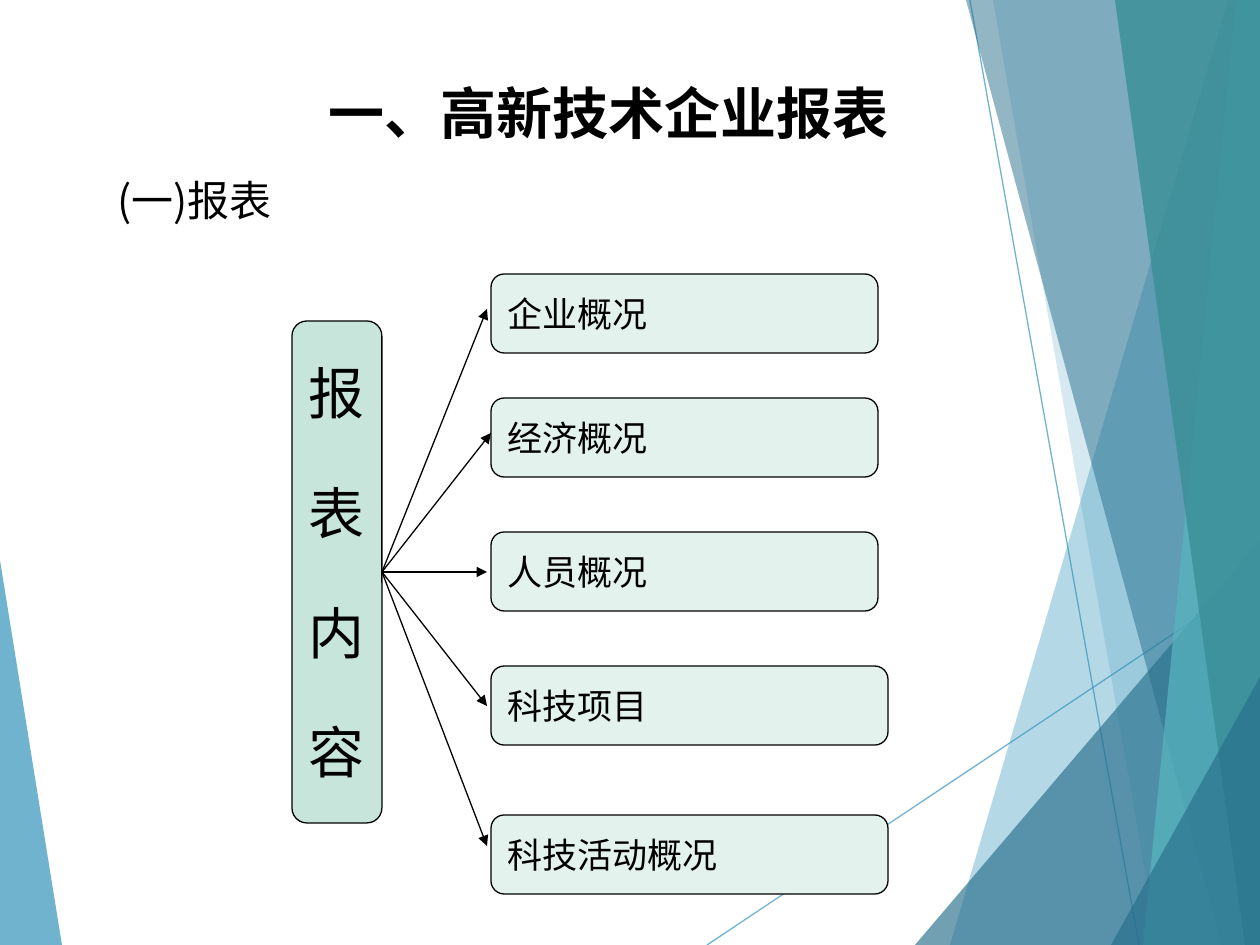
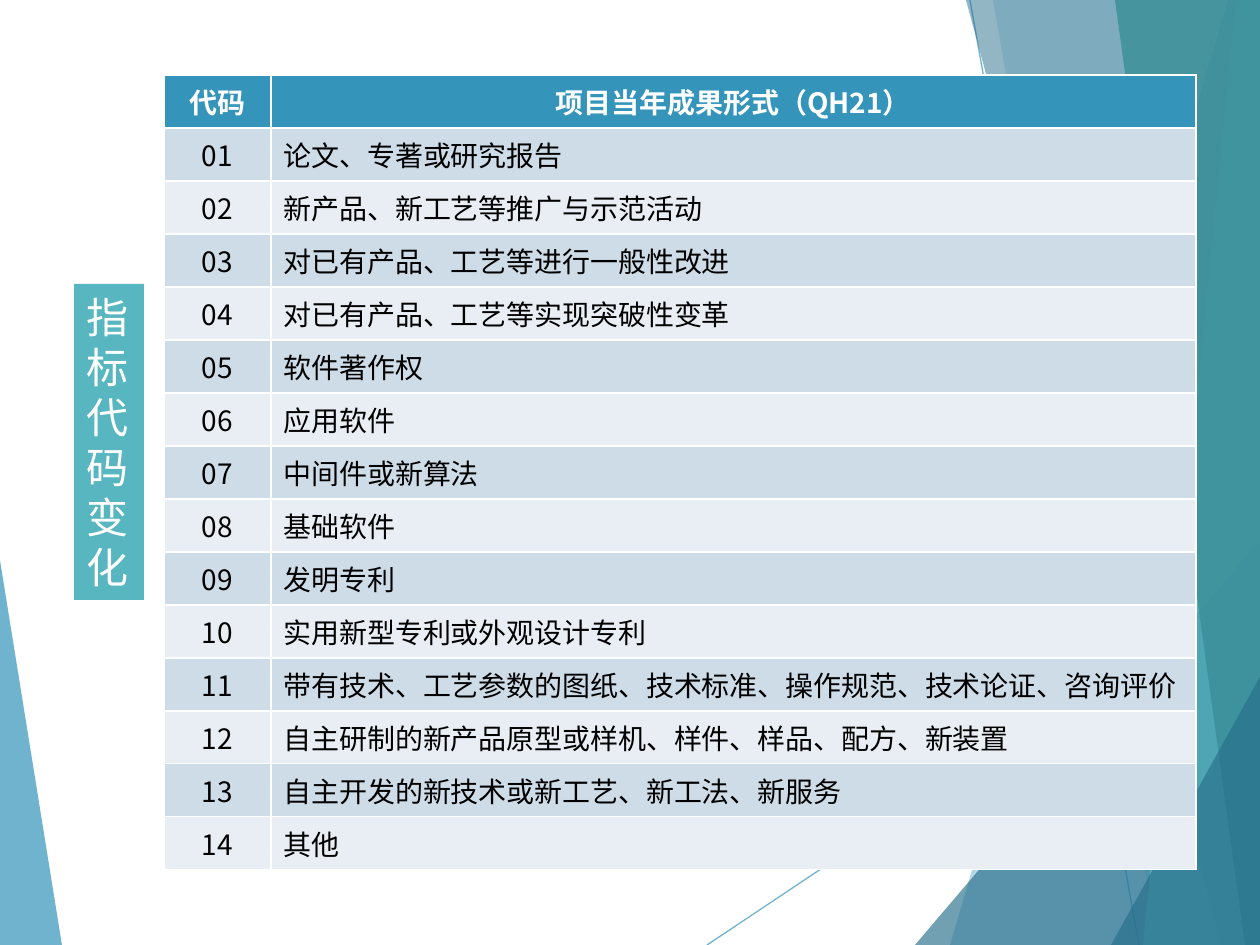
from lxml.etree import SubElement
from pptx import Presentation
from pptx.dml.color import RGBColor
from pptx.enum.shapes import MSO_CONNECTOR, MSO_SHAPE
from pptx.enum.text import MSO_ANCHOR, PP_ALIGN
from pptx.oxml.ns import qn
from pptx.util import Pt

PX = 914400 / 126
WIDE, HIGH = 1260, 945
FONT = "Noto Sans CJK SC"
BLUE, DEEP, TEAL, PINE = "3494BA", "276F8B", "58B6C0", "3A8F98"
BLACK, WHITE = "000000", "FFFFFF"
MINT, PALE = "C8E5DC", "E3F2ED"
BANDS = ("CEDCE7", "E8EEF3")

# top x, top y, foot x, side edge x, colour, opacity in percent
FACETS = [
    (0, 560, 62, 0, BLUE, 70),
    (1228, 0, 950, WIDE, BLUE, 36),
    (993, 0, 1158, WIDE, BLUE, 20),
    (WIDE, 540, 915, WIDE, DEEP, 66),
    (966, 0, 1222, WIDE, DEEP, 50),
    (1236, 0, 1143, WIDE, TEAL, 70),
    (1115, 0, 1245, WIDE, PINE, 82),
    (WIDE, 677, 1111, WIDE, DEEP, 66),
]
RAYS = [(707, HIGH, WIDE, 576), (970, 0, 1139, HIGH)]

TITLE = "一、高新技术企业报表"
SUBHEAD = "(一)报表"
SPINE = "报表内容"
# text, top, width, arrow tip
TOPICS = [
    ("企业概况", 274, 387, (487, 309)),
    ("经济概况", 398, 387, (491, 433)),
    ("人员概况", 532, 387, (487, 572)),
    ("科技项目", 666, 397, (487, 706)),
    ("科技活动概况", 815, 397, (487, 846)),
]

SIDE = "指标代码变化"
HEADS = ("代码", "项目当年成果形式（QH21）")
RESULTS = [
    "论文、专著或研究报告",
    "新产品、新工艺等推广与示范活动",
    "对已有产品、工艺等进行一般性改进",
    "对已有产品、工艺等实现突破性变革",
    "软件著作权",
    "应用软件",
    "中间件或新算法",
    "基础软件",
    "发明专利",
    "实用新型专利或外观设计专利",
    "带有技术、工艺参数的图纸、技术标准、操作规范、技术论证、咨询评价",
    "自主研制的新产品原型或样机、样件、样品、配方、新装置",
    "自主开发的新技术或新工艺、新工法、新服务",
    "其他",
]
COLS = (107, 925)
ROW = 51


def px(*vals):
    return [round(v * PX) for v in vals]


def put(item, **vals):
    for name, val in vals.items():
        setattr(item, name, val)


def paint(fill, hue):
    fill.solid()
    fill.fore_color.rgb = RGBColor.from_string(hue)


def fade(shape, part):
    """Give the shape's colour an opacity in percent."""
    for hue in shape.element.spPr.iter(qn("a:srgbClr")):
        SubElement(hue, qn("a:alpha"), val=str(part * 1000))


def write(frame, lines, size, hue=BLACK, bold=False, align=PP_ALIGN.LEFT, **para):
    """Fill a text frame; para holds further paragraph formats."""
    frame.text = "\n".join(lines)
    for item in frame.paragraphs:
        put(item, alignment=align, **para)
        run = item.runs[0]
        put(run.font, name=FONT, size=Pt(size), bold=bold)
        run.font.color.rgb = RGBColor.from_string(hue)
        SubElement(run.font._element, qn("a:ea"), typeface=FONT)


def place(shape, box):
    put(shape, **dict(zip(("left", "top", "width", "height"), px(*box))))
    put(shape.text_frame, word_wrap=True, vertical_anchor=MSO_ANCHOR.MIDDLE)


def draw(slide, start, end, hue):
    line = slide.shapes.add_connector(MSO_CONNECTOR.STRAIGHT, *px(*start, *end))
    line.line.width = Pt(0.75)
    paint(line.line.fill, hue)
    SubElement(line.element.spPr, qn("a:effectLst"))
    return line


def card(slide, box, hue):
    shape = slide.shapes.add_shape(MSO_SHAPE.FLOWCHART_ALTERNATE_PROCESS, *px(*box))
    place(shape, box)
    shape.shadow.inherit = False
    paint(shape.fill, hue)
    paint(shape.line.fill, BLACK)
    shape.line.width = Pt(0.75)
    return shape


def facet(slide, x, y, foot, edge, hue, part):
    pen = slide.shapes.build_freeform(x, y, PX)
    pen.add_line_segments([(foot, HIGH), (edge, HIGH), (edge, y)])
    shape = pen.convert_to_shape()
    shape.shadow.inherit = False
    paint(shape.fill, hue)
    shape.line.fill.background()
    fade(shape, part)
    return shape


def backdrop(slide):
    """Draw the shared facets and move them to the slide's layout."""
    parts = [facet(slide, *FACETS[0])]
    for ray in RAYS:
        line = draw(slide, ray[:2], ray[2:], BLUE)
        fade(line, 70)
        parts.append(line)
    parts += [facet(slide, *row) for row in FACETS[1:]]
    for num, part in enumerate(parts, 100):
        part.element.xpath(".//p:cNvPr")[0].set("id", str(num))
        slide.slide_layout.shapes.element.append(part.element)


def report(slide):
    title = slide.shapes.title
    place(title, (139, 72, 939, 81))
    write(title.text_frame, [TITLE], 32, bold=True, align=PP_ALIGN.CENTER)
    box = (105, 168, 357, 63)
    sub = slide.shapes.add_textbox(*px(*box))
    place(sub, box)
    write(sub.text_frame, [SUBHEAD], 24)

    spine = card(slide, (292, 321, 90, 502), MINT)
    write(spine.text_frame, SPINE, 32)
    for item in spine.text_frame.paragraphs[1:]:
        item.space_before = Pt(30)
    for text, top, width, tip in TOPICS:
        topic = card(slide, (491, top, width, 79), PALE)
        write(topic.text_frame, [text], 20)
        arrow = draw(slide, (382, 572), tip, BLACK)
        arrow.begin_connect(spine, 3)
        edge = arrow.element.spPr.find(qn("a:ln"))
        SubElement(edge, qn("a:tailEnd"), type="triangle")


def codes(slide):
    title = slide.shapes.title
    place(title, (74, 284, 70, 316))
    paint(title.fill, TEAL)
    write(title.text_frame, [SIDE], 24, WHITE, line_spacing=Pt(28.5))

    rows = [HEADS] + [(f"{n:02}", text) for n, text in enumerate(RESULTS, 1)]
    box = px(164, 75, sum(COLS), ROW * len(rows))
    table = slide.shapes.add_table(len(rows), len(COLS), *box).table
    for col, width in zip(table.columns, px(*COLS)):
        col.width = width
    for r, row in enumerate(rows):
        table.rows[r].height = px(ROW)[0]
        head = r == 0
        for c, text in enumerate(row):
            cell = table.cell(r, c)
            paint(cell.fill, BLUE if head else BANDS[(r - 1) % 2])
            write(cell.text_frame, [text], 16, WHITE if head else BLACK, head,
                  PP_ALIGN.CENTER if head or c == 0 else PP_ALIGN.LEFT)


def main():
    deck = Presentation()
    put(deck, **dict(zip(("slide_width", "slide_height"), px(WIDE, HIGH))))
    layout = deck.slide_layouts[5]
    first, second = [deck.slides.add_slide(layout) for _ in range(2)]
    backdrop(first)
    report(first)
    codes(second)
    deck.save("out.pptx")


if __name__ == "__main__":
    main()
